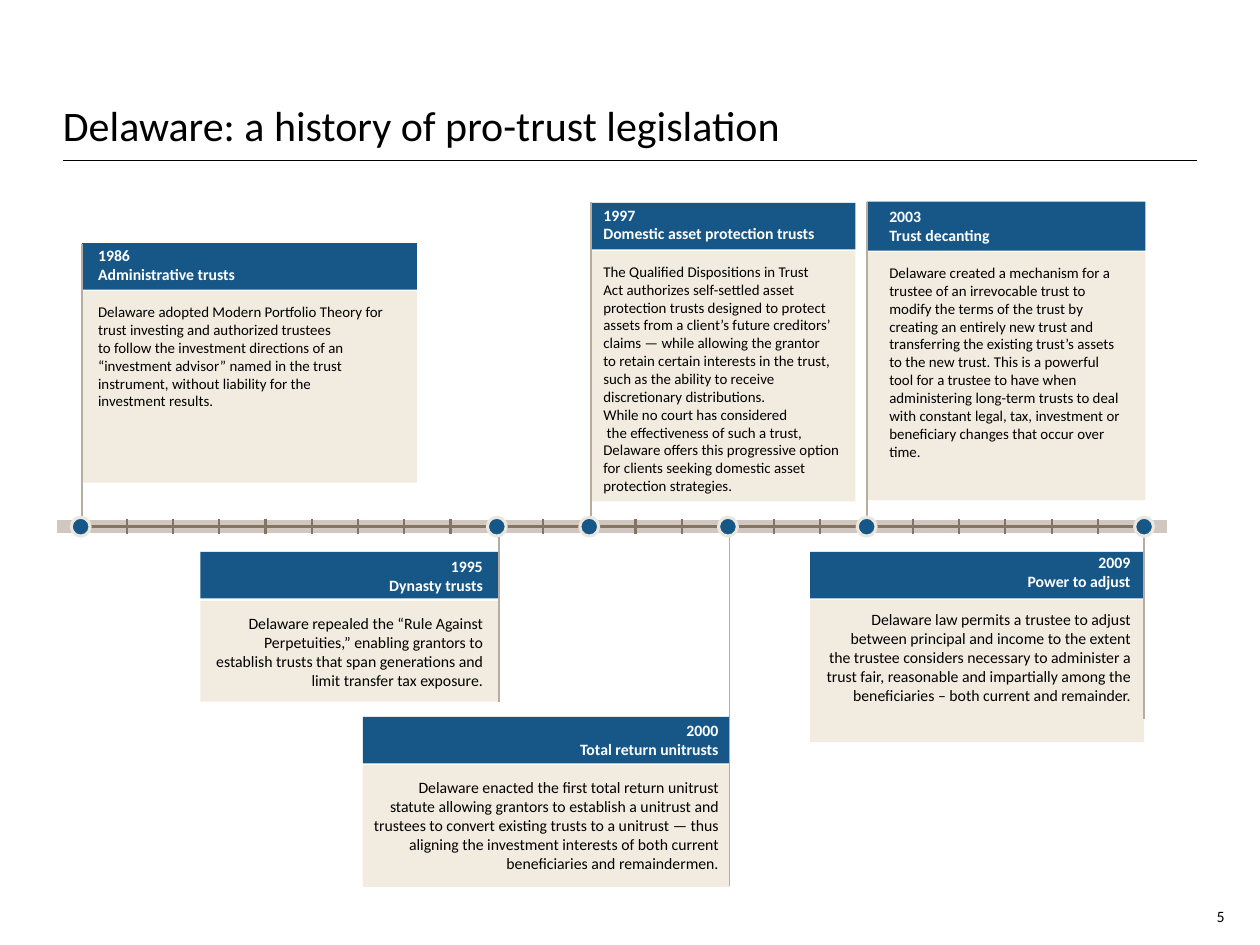
from copy import deepcopy
from dataclasses import dataclass

from lxml import etree
from pptx import Presentation
from pptx.dml.color import RGBColor
from pptx.enum.shapes import MSO_CONNECTOR, MSO_SHAPE
from pptx.enum.text import MSO_ANCHOR, MSO_AUTO_SIZE, PP_ALIGN
from pptx.oxml.ns import qn
from pptx.util import Inches, Pt

STRAIGHT = MSO_CONNECTOR.STRAIGHT
RECTANGLE, OVAL = MSO_SHAPE.RECTANGLE, MSO_SHAPE.OVAL
LEFT, RIGHT = PP_ALIGN.LEFT, PP_ALIGN.RIGHT
TOP, BOTTOM = MSO_ANCHOR.TOP, MSO_ANCHOR.BOTTOM


@dataclass(frozen=True)
class Theme:
    """Colours and type sizes of the page."""
    font: str = "Calibri"
    ink: str = "000000"
    white: str = "FFFFFF"
    blue: str = "165788"
    cream: str = "F2ECE0"
    ring: str = "EBE7DD"
    stem: str = "B8AB9F"
    band: str = "D0C7C0"
    axis: str = "857363"
    title: float = 24
    label: float = 9
    small: float = 8.5


THEME = Theme()
AXIS_Y = 4.18
FIRST_TICK, LAST_TICK, TICK_COUNT = 0.64, 9.08, 24
TICK_GAP = (LAST_TICK - FIRST_TICK) / (TICK_COUNT - 1)
TICK_HALF, MARKER_SIZE = 0.06, 0.15


@dataclass(frozen=True)
class Milestone:
    """One law: its year, wording and place on the timeline."""
    year: str
    name: str
    body: str
    tick: int
    head: tuple
    panel: tuple
    text: tuple
    stem: tuple
    align: PP_ALIGN = LEFT
    size: float = THEME.small


MILESTONES = [
    Milestone("1986", "Administrative trusts",
              "Delaware adopted Modern Portfolio Theory for trust investing and authorized trustees \v"
              "to follow the investment directions of an “investment advisor” named in the trust "
              "instrument, without liability for the \vinvestment results.",
              0, (0.65, 1.93, 2.66, 0.37), (0.65, 2.31, 2.66, 1.52),
              (0.68, 1.9, 2.55, 1.46), (1.94, 4.11)),
    Milestone("1995", "Dynasty trusts",
              "Delaware repealed the “Rule Against Perpetuities,” enabling grantors to establish "
              "trusts that span generations and limit transfer tax exposure.",
              9, (1.59, 4.38, 2.37, 0.37), (1.59, 4.77, 2.37, 0.8),
              (1.57, 4.37, 2.36, 1.16), (4.25, 5.57), RIGHT, THEME.label),
    Milestone("1997", "Domestic asset protection trusts",
              "The Qualified Dispositions in Trust \vAct authorizes self-settled asset protection "
              "trusts designed to protect assets from a client’s future creditors’ claims — while "
              "allowing the grantor \vto retain certain interests in the trust, such as the ability "
              "to receive discretionary distributions. \vWhile no court has considered\v the "
              "effectiveness of such a trust, Delaware offers this progressive option for clients "
              "seeking domestic asset protection strategies.",
              11, (4.69, 1.61, 2.1, 0.37), (4.69, 1.99, 2.1, 1.99),
              (4.69, 1.58, 2.19, 2.42), (1.6, 4.11)),
    Milestone("2000", "Total return unitrusts",
              "Delaware enacted the first total return unitrust statute allowing grantors to "
              "establish a unitrust and trustees to convert existing trusts to a unitrust — thus "
              "aligning the investment interests of both current beneficiaries and remaindermen.",
              14, (2.88, 5.69, 2.91, 0.37), (2.88, 6.07, 2.91, 0.97),
              (2.86, 5.67, 2.94, 1.31), (4.25, 7.03), RIGHT, THEME.label),
    Milestone("2003", "Trust decanting",
              "Delaware created a mechanism for a trustee of an irrevocable trust to modify the "
              "terms of the trust by creating an entirely new trust and transferring the existing "
              "trust’s assets to the new trust. This is a powerful tool for a trustee to have when "
              "administering long-term trusts to deal with constant legal, tax, investment or "
              "beneficiary changes that occur over time.",
              17, (6.88, 1.6, 2.21, 0.39), (6.88, 2, 2.21, 1.97),
              (6.96, 1.59, 2.07, 2.13), (1.6, 4.12)),
    Milestone("2009", "Power to adjust",
              "Delaware law permits a trustee to adjust between principal and income to the extent "
              "the trustee considers necessary to administer a trust fair, reasonable and "
              "impartially among the beneficiaries – both current and remainder.",
              23, (6.43, 4.38, 2.65, 0.37), (6.43, 4.76, 2.65, 1.13),
              (6.46, 4.34, 2.61, 1.31), (4.25, 5.71), RIGHT, THEME.label),
]


def add_line(page, start, end, color, width):
    """Draw a straight line without a shadow."""
    line = page.shapes.add_connector(STRAIGHT, *map(Inches, start + end))
    line.line.color.rgb = RGBColor.from_string(color)
    line.line.width = Pt(width)
    etree.SubElement(line._element.spPr, qn("a:effectLst"))


def add_filled(page, kind, place, fill, outline=None):
    """Draw a filled shape, outlined only when a colour is given."""
    shape = page.shapes.add_shape(kind, *map(Inches, place))
    shape.shadow.inherit = False
    shape.fill.solid()
    shape.fill.fore_color.rgb = RGBColor.from_string(fill)
    if outline:
        shape.line.color.rgb = RGBColor.from_string(outline)
        shape.line.width = Pt(1.75)
    else:
        shape.line.fill.background()


def add_box(page, place, insets=(0.1, 0.05, 0.1, 0.05), anchor=TOP, grow=False):
    """Add a wrapping text box and return its text frame."""
    frame = page.shapes.add_textbox(*map(Inches, place)).text_frame
    frame.word_wrap = True
    frame.auto_size = MSO_AUTO_SIZE.SHAPE_TO_FIT_TEXT if grow else MSO_AUTO_SIZE.NONE
    frame.vertical_anchor = anchor
    (frame.margin_left, frame.margin_top,
     frame.margin_right, frame.margin_bottom) = map(Inches, insets)
    return frame


def write(para, text, size, color=THEME.ink, bold=False, align=LEFT, before=0):
    """Fill a paragraph, giving its line breaks the format of its spans."""
    para.text = text
    para.alignment = align
    para.space_before = Pt(before)
    for span in para.runs:
        span.font.name = THEME.font
        span.font.size = Pt(size)
        span.font.bold = bold
        span.font.color.rgb = RGBColor.from_string(color)
    for line_break in para._p.findall(qn("a:br")):
        line_break.append(deepcopy(para.runs[0]._r.rPr))


def add_card(page, item):
    """Draw a milestone's panels, its stem and its wording."""
    add_filled(page, RECTANGLE, item.head, THEME.blue)
    add_filled(page, RECTANGLE, item.panel, THEME.cream)
    left, _, width, _ = item.head
    stem_x = left + width if item.align == RIGHT else left
    add_line(page, (stem_x, item.stem[0]), (stem_x, item.stem[1]), THEME.stem, 1)
    frame = add_box(page, item.text, grow=True)
    heading = {"size": THEME.label, "color": THEME.white, "bold": True, "align": item.align}
    write(frame.paragraphs[0], item.year, **heading)
    write(frame.add_paragraph(), item.name, **heading)
    write(frame.add_paragraph(), item.body, item.size, align=item.align, before=11)


def add_axis(page):
    """Draw the timeline with evenly spaced ticks and the milestone markers."""
    add_line(page, (0.45, AXIS_Y), (9.26, AXIS_Y), THEME.band, 7.25)
    add_line(page, (0.56, AXIS_Y), (9.09, AXIS_Y), THEME.axis, 2)
    ticks = [FIRST_TICK + index * TICK_GAP for index in range(TICK_COUNT)]
    for x in ticks:
        add_line(page, (x, AXIS_Y - TICK_HALF), (x, AXIS_Y + TICK_HALF), THEME.axis, 1.25)
    for item in MILESTONES:
        place = (ticks[item.tick] - MARKER_SIZE / 2, AXIS_Y - MARKER_SIZE / 2,
                 MARKER_SIZE, MARKER_SIZE)
        add_filled(page, OVAL, place, THEME.blue, THEME.ring)


def main():
    """Build the timeline slide."""
    deck = Presentation()
    deck.slide_width, deck.slide_height = Inches(10), Inches(7.5)
    page = deck.slides.add_slide(deck.slide_layouts[6])
    add_line(page, (0.5, 1.27), (9.5, 1.27), THEME.ink, 0.5)
    title = add_box(page, (0.5, 0.34, 9, 0.93), (0, 0.05, 0, 0.08), BOTTOM)
    write(title.paragraphs[0], "Delaware: a history of pro-trust legislation", THEME.title)
    for item in MILESTONES:
        add_card(page, item)
    add_axis(page)
    number = add_box(page, (9.33, 7.1, 0.39, 0.25), (0, 0, 0, 0), BOTTOM)
    write(number.paragraphs[0], "5", THEME.label, align=RIGHT)
    deck.save("out.pptx")


if __name__ == "__main__":
    main()
